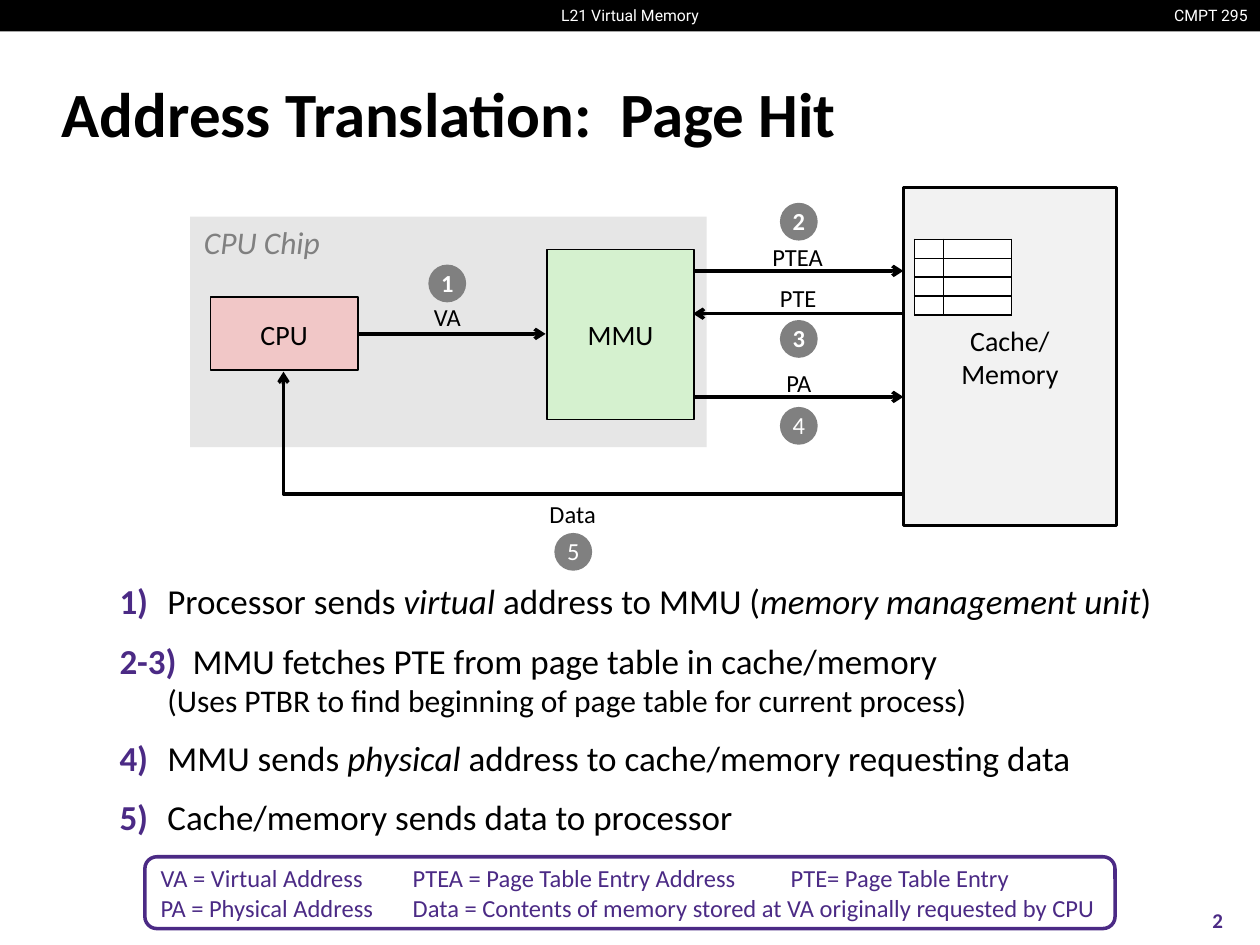
"""Build the Address Translation: Page Hit slide on a grid of 100 columns by 75 rows."""
from lxml import etree
from pptx import Presentation, util as u
from pptx.dml.color import RGBColor
from pptx.enum import shapes, text
from pptx.oxml.ns import qn

THEME = {
    "black": "000000", "white": "FFFFFF", "purple": "4B2A85", "grey": "808080",
    "chip": "E6E6E6", "mmu": "D5F1CF", "memory": "F2F2F2", "cpu": "F1C7C7",
    "font": "Calibri", "header_font": "Roboto",
    "title": 36, "step": 20, "note": 18, "block": 16, "label": 14, "number": 12, "header": 9,
}
LEFT, CENTER, RIGHT = text.PP_ALIGN.LEFT, text.PP_ALIGN.CENTER, text.PP_ALIGN.RIGHT
TOP, MIDDLE = text.MSO_ANCHOR.TOP, text.MSO_ANCHOR.MIDDLE
RECT, OVAL = shapes.MSO_SHAPE.RECTANGLE, shapes.MSO_SHAPE.OVAL
ROUND = shapes.MSO_SHAPE.ROUNDED_RECTANGLE

prs = Presentation()
prs.slide_width, prs.slide_height = u.Inches(10), u.Inches(7.5)
COL, ROW = prs.slide_width / 100, prs.slide_height / 75
s = prs.slides.add_slide(prs.slide_layouts[5])


def add_box(kind, x, y, w, h, lines=(), size="label", color="black", fill=None, line=None,
            width=1, align=CENTER, anchor=MIDDLE, bold=False, italic=False, font="font",
            wrap=False, spacing=None):
    """Add a preset shape, or a text box when kind is None."""
    place = [int(v) for v in (x * COL, y * ROW, w * COL, h * ROW)]
    if kind is None:
        sp = s.shapes.add_textbox(*place)
    else:
        sp = s.shapes.add_shape(kind, *place)
        sp.shadow.inherit = False
        if fill:
            sp.fill.solid()
            sp.fill.fore_color.rgb = RGBColor.from_string(THEME[fill])
        else:
            sp.fill.background()
        if line:
            sp.line.color.rgb = RGBColor.from_string(THEME[line])
            sp.line.width = u.Pt(width)
        else:
            sp.line.fill.background()
    tf = sp.text_frame
    tf.word_wrap, tf.vertical_anchor = wrap, anchor
    for i, content in enumerate(lines):
        p = tf.paragraphs[0] if i == 0 else tf.add_paragraph()
        p.text, p.alignment = content, align
        if spacing:
            p.line_spacing = spacing
        p.font.name, p.font.size = THEME[font], u.Pt(THEME[size])
        p.font.bold, p.font.italic = bold, italic
        p.font.color.rgb = RGBColor.from_string(THEME[color])
    return sp


def add_arrow(x1, y1, x2, y2, kind=shapes.MSO_CONNECTOR.STRAIGHT):
    """Add a black connector with an open arrowhead at its end."""
    cn = s.shapes.add_connector(kind, *[int(v) for v in (x1 * COL, y1 * ROW, x2 * COL, y2 * ROW)])
    cn.line.color.rgb = RGBColor.from_string(THEME["black"])
    cn.line.width = u.Pt(2)
    etree.SubElement(cn.line._get_or_add_ln(), qn("a:tailEnd"), type="arrow")
    etree.SubElement(cn._element.spPr, qn("a:effectLst"))
    return cn


add_box(RECT, 0, 0, 100, 2.5, fill="black")
for x, w, align, label in [(91.9, 8.1, RIGHT, "CMPT 295"), (43.5, 13, CENTER, "L21 Virtual Memory")]:
    add_box(None, x, 0, w, 2.5, [label], "header", "white", align=align, anchor=TOP, font="header_font")

add_box(RECT, 15.1, 17.2, 41, 18.3, fill="chip")
add_box(None, 15.2, 17.2, 11.3, 4, ["CPU Chip"], "note", "grey", align=LEFT, anchor=TOP, italic=True)

title = s.shapes.title
title.left, title.top = int(3.9 * COL), int(4.8 * ROW)
title.width, title.height = int(91.9 * COL), int(8.3 * ROW)
tf = title.text_frame
tf.text = "Address Translation:  Page Hit"
tf.auto_size, tf.vertical_anchor = text.MSO_AUTO_SIZE.NONE, MIDDLE
p = tf.paragraphs[0]
p.alignment = LEFT
p.font.name, p.font.size, p.font.bold = THEME["font"], u.Pt(THEME["title"]), True
p.font.color.rgb = RGBColor.from_string(THEME["black"])

for x, y, w, h, lines, fill, width in [
    (43.4, 19.8, 11.7, 13.5, ["MMU"], "mmu", 1),
    (71.7, 14.9, 16.9, 26.8, ["Cache/", "Memory"], "memory", 1.5),
    (16.7, 23.6, 11.7, 5.8, ["CPU"], "cpu", 1),
]:
    add_box(RECT, x, y, w, h, lines, "block", fill=fill, line="black", width=width)

for x, y, w, label in [(33.4, 23.6, 4.2, "VA"), (60.3, 18.8, 6, "PTEA"), (60.9, 22.1, 4.9, "PTE"),
                       (61.4, 28.8, 4, "PA"), (42.6, 39.2, 5.7, "Data")]:
    add_box(None, x, y, w, 3.3, [label], spacing=0.98)

for ends in [(28.4, 26.5, 43.3, 26.5), (55, 21.5, 71.7, 21.5),
             (71.7, 24.9, 55, 24.9), (55, 31.5, 71.7, 31.5)]:
    add_arrow(*ends)
data = add_arrow(22.5, 29.5, 71.7, 39.2, shapes.MSO_CONNECTOR.ELBOW)
data._element.spPr.find(qn("a:prstGeom")).set("prst", "bentConnector2")
data._element.spPr.find(qn("a:xfrm")).set("rot", "10800000")

for n, (x, y) in enumerate([(34, 21), (61.9, 16.1), (61.9, 25.4), (61.9, 32.3), (44, 42.3)], 1):
    add_box(OVAL, x, y, 3, 3, [str(n)], color="white", fill="grey", bold=n <= 3, spacing=0.98)

table = s.shapes.add_table(4, 2, int(72.6 * COL), int(19 * ROW), int(7.7 * COL), int(6 * ROW)).table
table.first_row = table.horz_banding = False
for column, w in zip(table.columns, (2.3, 5.4)):
    column.width = int(w * COL)
for cell in table.iter_cells():
    cell.margin_left = cell.margin_right = cell.margin_top = cell.margin_bottom = 0
    cell.fill.solid()
    cell.fill.fore_color.rgb = RGBColor.from_string(THEME["white"])
    cell.text_frame.paragraphs[0]._p.get_or_add_endParaRPr().set("sz", "600")
    for i, side in enumerate(("lnL", "lnR", "lnT", "lnB")):
        ln = etree.Element(qn("a:" + side), w=str(u.Pt(1)))
        paint = etree.SubElement(ln, qn("a:solidFill"))
        etree.SubElement(paint, qn("a:srgbClr"), val=THEME["black"])
        cell._tc.get_or_add_tcPr().insert(i, ln)

steps = [
    [("1)\t", "key"), ("Processor sends ", ""), ("virtual ", "italic"), ("address to MMU (", ""),
     ("memory management unit", "italic"), (")", "")],
    [("2-3)  ", "key"), ("MMU fetches PTE from page table in cache/memory", ""), ("", "break"),
     ("(Uses PTBR to find beginning of page table for current process)", "note")],
    [("4)\t", "key"), ("MMU sends ", ""), ("physical ", "italic"),
     ("address to cache/memory requesting data", "")],
    [("5)\t", "key"), ("Cache/memory sends data to processor", "")],
]
body = add_box(None, 8.5, 45.5, 91.5, 22.5, [""] * len(steps), "step", align=LEFT, anchor=TOP, wrap=True)
for i, (p, runs) in enumerate(zip(body.text_frame.paragraphs, steps)):
    p._p.get_or_add_pPr().set("marL", str(u.Inches(0.38)))
    p._p.get_or_add_pPr().set("indent", str(-u.Inches(0.38)))
    if i:
        p.space_before = u.Pt(10)
    for content, style in runs:
        if style == "break":
            p.add_line_break()
            continue
        r = p.add_run()
        r.text = content
        if style == "key":
            r.font.bold = True
            r.font.color.rgb = RGBColor.from_string(THEME["purple"])
        elif style == "italic":
            r.font.italic = True
        elif style == "note":
            r.font.size = u.Pt(THEME["note"])

add_box(ROUND, 11.5, 68, 77, 5.7, [
    "VA = Virtual Address\tPTEA = Page Table Entry Address\tPTE= Page Table Entry\v"
    "PA = Physical Address\tData = Contents of memory stored at VA originally requested by CPU",
], color="purple", line="purple", width=2, align=LEFT, wrap=True)
add_box(None, 93.3, 71, 6.7, 4, ["2"], "number", "purple", bold=True, wrap=True)

prs.save("out.pptx")
